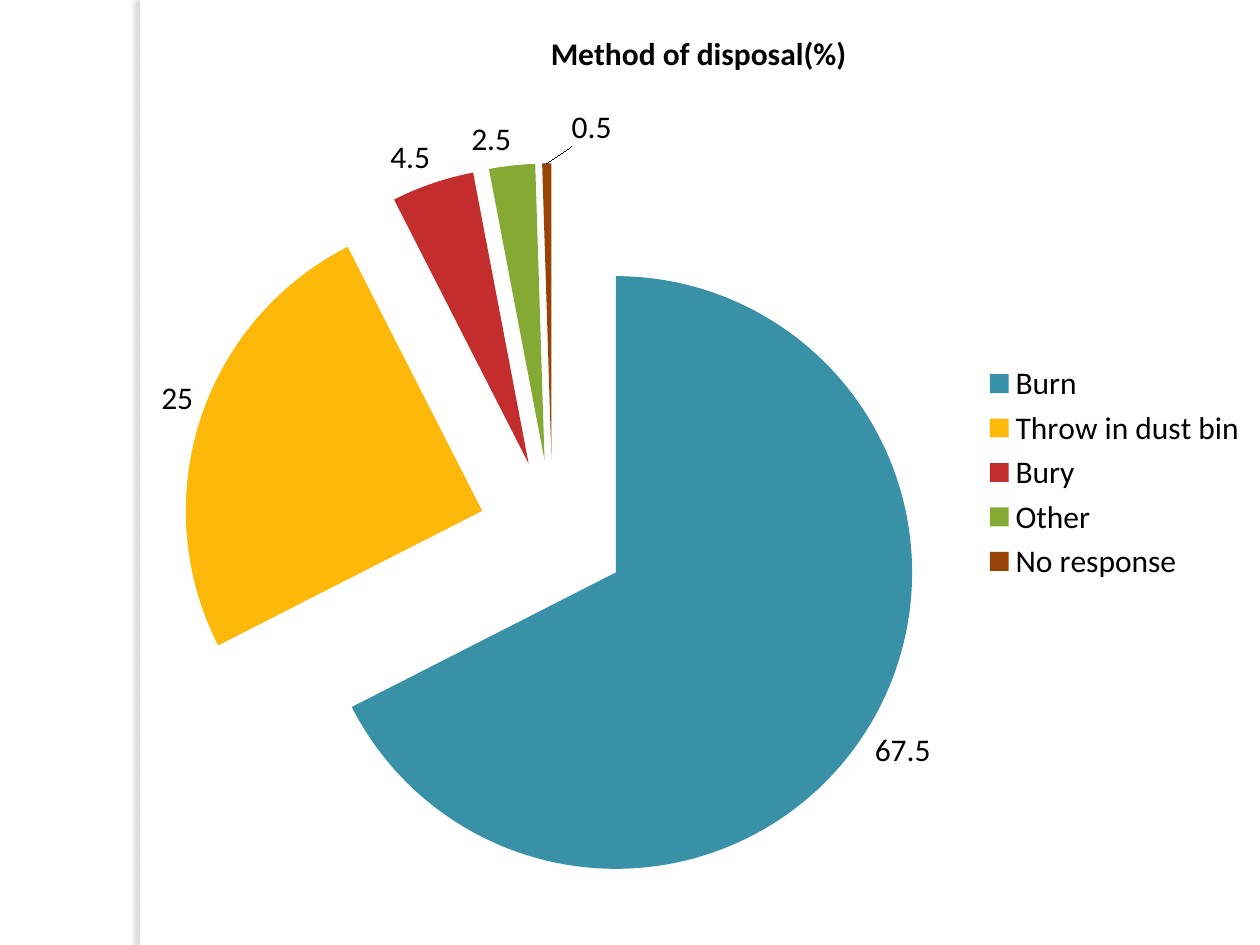
from lxml.etree import SubElement
from pptx import Presentation
from pptx.chart.data import CategoryChartData
from pptx.dml.color import RGBColor
from pptx.enum.chart import XL_CHART_TYPE, XL_LABEL_POSITION, XL_LEGEND_POSITION
from pptx.enum.shapes import MSO_SHAPE
from pptx.oxml import parse_xml
from pptx.oxml.ns import nsdecls, qn
from pptx.util import Inches, Pt

SLICES = [
    ("Burn", 67.5, "3891A7"),
    ("Throw in dust bin", 25, "FEB80A"),
    ("Bury", 4.5, "C32D2E"),
    ("Other", 2.5, "84AA33"),
    ("No response", 0.5, "964305"),
]


def rgb(value):
    return RGBColor.from_string(value)


def manual_layout(**settings):
    """Return a c:layout element with the given manual settings, in order."""
    layout = parse_xml(f"<c:layout {nsdecls('c')}><c:manualLayout/></c:layout>")
    for name, value in settings.items():
        SubElement(layout[0], qn(f"c:{name}")).set("val", str(value))
    return layout


class SlideBuilder:
    font = "Calibri"
    text_color = "000000"
    text_size = 18

    def __init__(self, slide):
        self.slide = slide

    def style_font(self, font, bold=False):
        font.name = self.font
        font.size = Pt(self.text_size)
        font.bold = bold
        font.color.rgb = rgb(self.text_color)

    def shadowed_bar(self, x, y, w, h, fill, shadow):
        sp = self.slide.shapes.add_shape(
            MSO_SHAPE.RECTANGLE, Inches(x), Inches(y), Inches(w), Inches(h))
        sp.fill.solid()
        sp.fill.fore_color.rgb = rgb(fill)
        sp.line.fill.background()
        sp.shadow.inherit = False
        effects = sp._element.spPr.find(qn("a:effectLst"))
        effects.append(parse_xml(
            f'<a:outerShdw {nsdecls("a")} blurRad="{Pt(3)}" dist="{Pt(3)}" '
            f'dir="10800000" algn="tl" rotWithShape="0"><a:srgbClr val="{shadow}">'
            '<a:alpha val="25000"/></a:srgbClr></a:outerShdw>'))

    def exploded_pie(self, x, y, w, h, title, slices, explosion):
        names, values, colors = zip(*slices)
        data = CategoryChartData()
        data.categories = names
        data.add_series("Series 1", values)
        chart = self.slide.shapes.add_chart(
            XL_CHART_TYPE.PIE, Inches(x), Inches(y), Inches(w), Inches(h), data).chart
        self.style_font(chart.font)

        chart.has_title = True
        r = chart.chart_title.text_frame.paragraphs[0].add_run()
        r.text = title
        self.style_font(r.font, bold=True)

        chart.has_legend = True
        chart.legend.position = XL_LEGEND_POSITION.RIGHT
        chart.legend.include_in_layout = False
        self.style_font(chart.legend.font)

        plot = chart.plots[0]
        plot.vary_by_categories = True
        series = plot.series[0]
        for i, color in enumerate(colors):
            fill = series.points[i].format.fill
            fill.solid()
            fill.fore_color.rgb = rgb(color)
        ser = series._element
        node = parse_xml(f'<c:explosion {nsdecls("c")} val="{explosion}"/>')
        ser.find(qn("c:dPt")).addprevious(node)

        labels = series.data_labels
        labels.show_value = True
        labels.position = XL_LABEL_POSITION.OUTSIDE_END
        self.style_font(labels.font)
        self.shift_label(series, len(slices) - 1, 0.04, -0.01)

        area = chart._chartSpace.chart.plotArea
        for old in area.findall(qn("c:layout")):
            area.remove(old)
        area.insert(0, manual_layout(
            layoutTarget="inner", xMode="edge", yMode="edge",
            x=0.04, y=0.17, w=0.66, h=0.79))

    def shift_label(self, series, index, dx, dy):
        """Move one label off its slice, by fractions of the chart size."""
        label = series.points[index].data_label
        label.position = XL_LABEL_POSITION.OUTSIDE_END
        self.style_font(label.font)
        series._element.xpath(".//c:dLbl")[0].insert(1, manual_layout(x=dx, y=dy))


def main():
    prs = Presentation()
    prs.slide_width, prs.slide_height = Inches(10), Inches(7.5)
    s = SlideBuilder(prs.slides.add_slide(prs.slide_layouts[6]))
    s.shadowed_bar(1.11, 0, 0.08, 7.5, fill="FFFFFF", shadow="736F63")
    s.exploded_pie(1.09, 0, 8.91, 7.5, "Method of disposal(%)", SLICES, explosion=25)
    prs.save("out.pptx")


if __name__ == "__main__":
    main()
